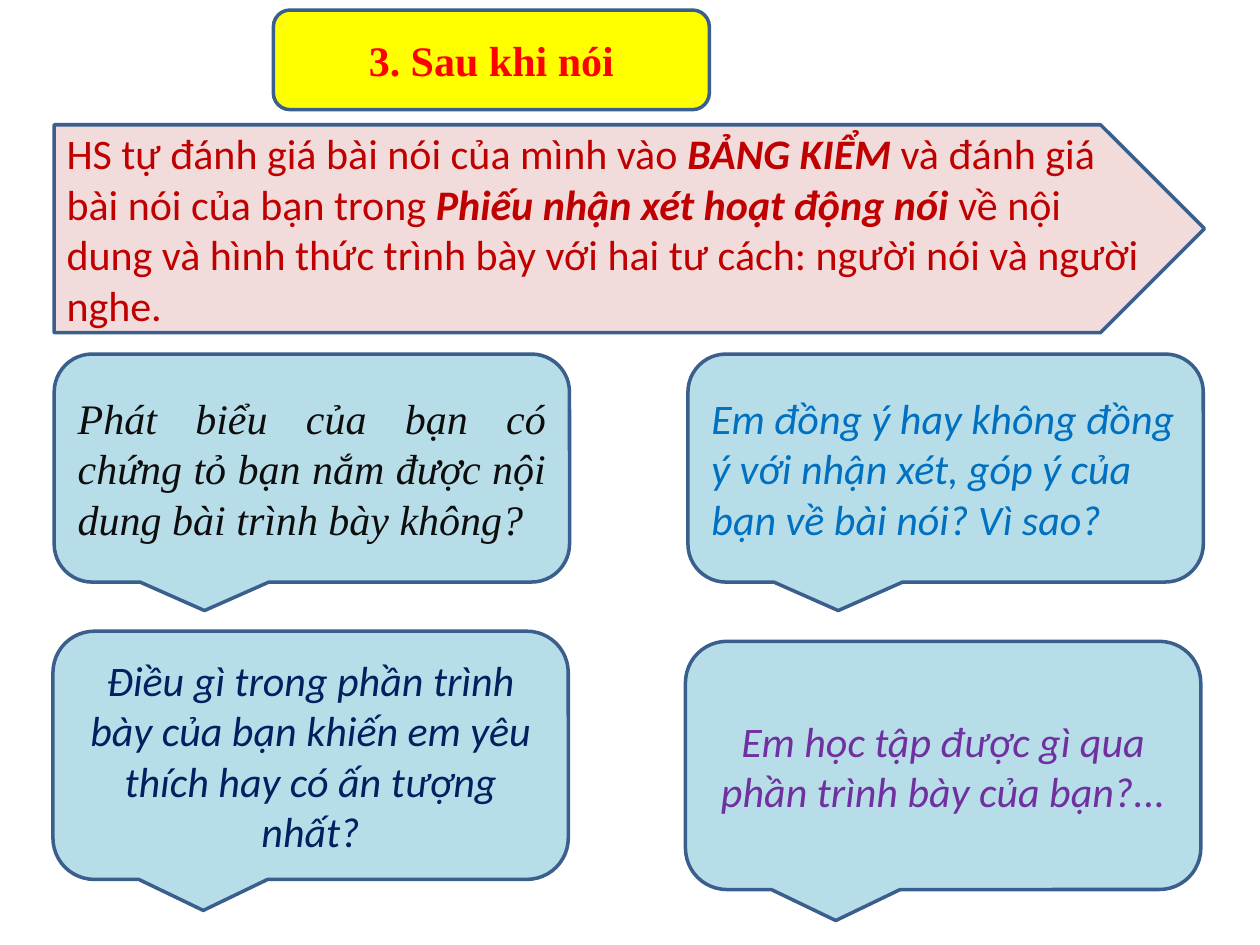
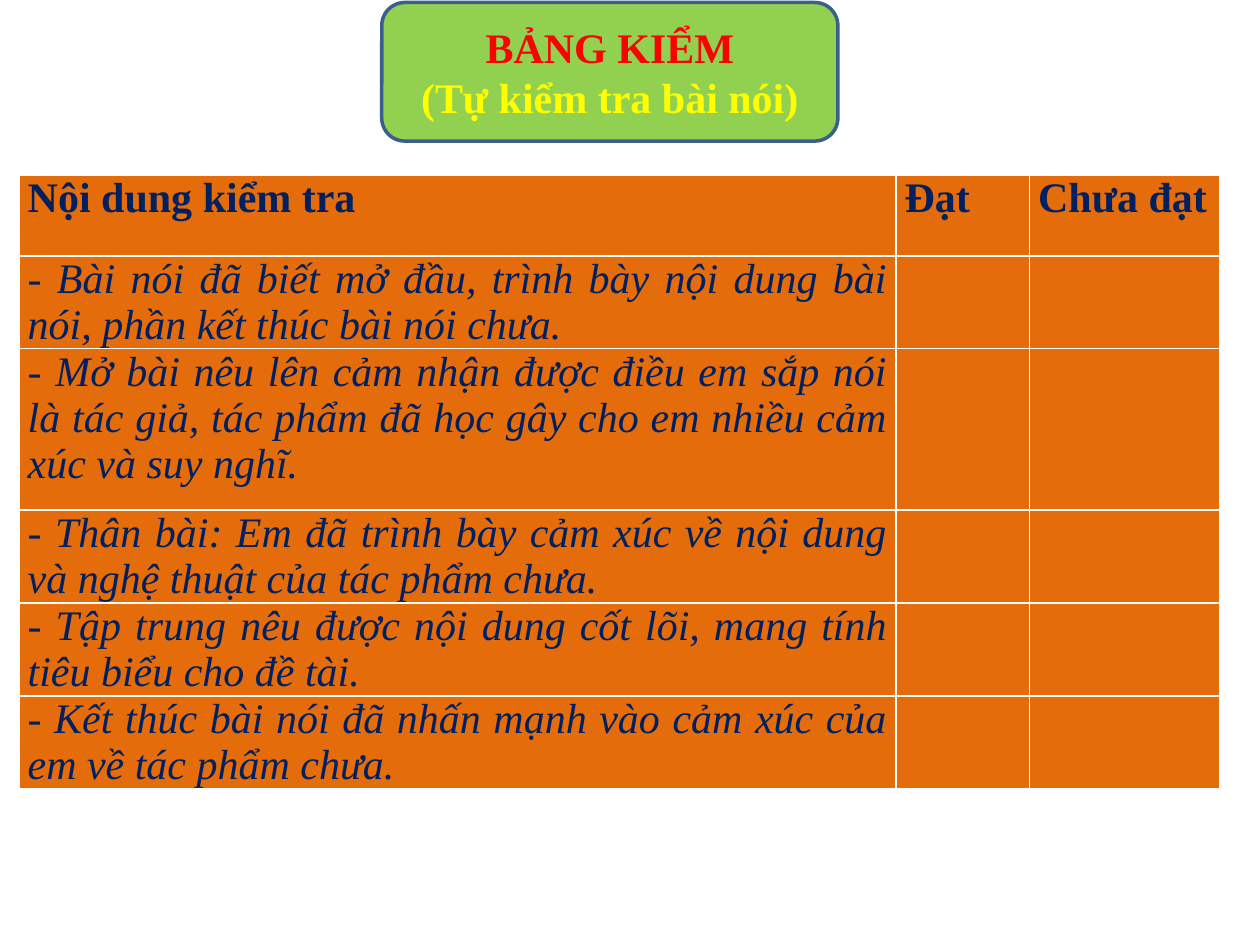
from dataclasses import dataclass

from pptx import Presentation
from pptx.dml.color import RGBColor
from pptx.enum.shapes import MSO_SHAPE as SHAPE
from pptx.enum.text import MSO_ANCHOR as ANCHOR, PP_ALIGN as ALIGN
from pptx.util import Inches, Pt


@dataclass(frozen=True)
class Theme:
    serif: str = "Times New Roman"
    sans: str = "Calibri"
    size: int = 24
    outline_width: int = 2
    outline: str = "3A5F8C"
    yellow: str = "FFFF00"
    red: str = "FF0000"
    dark_red: str = "C00000"
    pink: str = "F2DCDB"
    pale_blue: str = "B7DEE8"
    green: str = "92D050"
    orange: str = "E46C0A"
    ink: str = "0D0D0D"
    navy: str = "002060"
    blue: str = "0070C0"
    purple: str = "7030A0"


class Deck:
    def __init__(self, theme):
        self.theme = theme
        self.prs = Presentation()
        self.prs.slide_width, self.prs.slide_height = Inches(10), Inches(7.5)
        self.s = None

    def slide(self):
        self.s = self.prs.slides.add_slide(self.prs.slide_layouts[6])

    def run(self, p, text, font, color, bold=False, italic=False):
        r = p.add_run()
        r.text = text
        r.font.name = font
        r.font.size = Pt(self.theme.size)
        r.font.bold, r.font.italic = bold, italic
        r.font.color.rgb = RGBColor.from_string(color)

    def box(self, kind, at, fill):
        sp = self.s.shapes.add_shape(kind, *(Inches(v) for v in at))
        sp.shadow.inherit = False
        sp.fill.solid()
        sp.fill.fore_color.rgb = RGBColor.from_string(fill)
        sp.line.color.rgb = RGBColor.from_string(self.theme.outline)
        sp.line.width = Pt(self.theme.outline_width)
        tf = sp.text_frame
        tf.word_wrap = True
        tf.vertical_anchor = ANCHOR.MIDDLE
        return tf

    def title(self, kind, at, fill, lines):
        tf = self.box(kind, at, fill)
        for i, (text, color) in enumerate(lines):
            p = tf.add_paragraph() if i else tf.paragraphs[0]
            p.alignment = ALIGN.CENTER
            self.run(p, text, self.theme.serif, color, bold=True)

    def banner(self, at, parts):
        p = self.box(SHAPE.PENTAGON, at, self.theme.pink).paragraphs[0]
        p.alignment = ALIGN.LEFT
        for text, strong in parts:
            self.run(p, text, self.theme.sans, self.theme.dark_red, strong, strong)

    def question(self, at, text, font, color, align):
        tf = self.box(SHAPE.ROUNDED_RECTANGULAR_CALLOUT, at, self.theme.pale_blue)
        p = tf.paragraphs[0]
        p.alignment = align
        self.run(p, text, font, color, italic=True)

    def checklist(self, left, top, widths, heights, header, criteria):
        rows = [header] + [[text, "", ""] for text in criteria]
        table = self.s.shapes.add_table(
            len(rows), len(widths), Inches(left), Inches(top),
            Inches(sum(widths)), Inches(sum(heights))).table
        for column, width in zip(table.columns, widths):
            column.width = Inches(width)
        for i, (row, height, texts) in enumerate(zip(table.rows, heights, rows)):
            row.height = Inches(height)
            for cell, text in zip(row.cells, texts):
                cell.fill.solid()
                cell.fill.fore_color.rgb = RGBColor.from_string(self.theme.orange)
                cell.margin_left = cell.margin_right = Inches(0.07)
                cell.margin_top = cell.margin_bottom = 0
                if text:
                    p = cell.text_frame.paragraphs[0]
                    p.alignment = ALIGN.JUSTIFY
                    self.run(p, text, self.theme.serif, self.theme.navy,
                             bold=i == 0, italic=i > 0)


def after_speaking(deck):
    t = deck.theme
    deck.slide()
    deck.title(SHAPE.ROUNDED_RECTANGLE, (2.17, 0.08, 3.46, 0.79), t.yellow,
               [("3. Sau khi nói", t.red)])
    deck.banner((0.43, 0.99, 9.13, 1.65), [
        ("HS tự đánh giá bài nói của mình vào ", False),
        ("BẢNG KIỂM ", True),
        ("và đánh giá bài nói của bạn trong ", False),
        ("Phiếu nhận xét hoạt động nói ", True),
        ("về nội dung và hình thức trình bày với hai tư cách: "
         "người nói và người nghe.", False),
    ])
    width, upper, lower = 4.09, 1.81, 1.97
    questions = [
        ((0.43, 2.81, width, upper),
         "Phát biểu của bạn có chứng tỏ bạn nắm được nội dung bài trình bày không?",
         t.serif, t.ink, ALIGN.JUSTIFY),
        ((5.44, 5.09, width, lower),
         "Em học tập được gì qua phần trình bày của bạn?...",
         t.sans, t.purple, ALIGN.CENTER),
        ((0.42, 5.01, width, lower),
         "Điều gì trong phần trình bày của bạn khiến em yêu thích hay có ấn tượng nhất?",
         t.sans, t.navy, ALIGN.CENTER),
        ((5.46, 2.81, width, upper),
         "Em đồng ý hay không đồng ý với nhận xét, góp ý của bạn về bài nói? Vì sao?",
         t.sans, t.blue, ALIGN.LEFT),
    ]
    for question in questions:
        deck.question(*question)


def self_check(deck):
    t = deck.theme
    deck.slide()
    deck.title(SHAPE.FLOWCHART_ALTERNATE_PROCESS, (3.03, 0.02, 3.62, 1.1), t.green,
               [("BẢNG KIỂM", t.red), ("(Tự kiểm tra bài nói)", t.yellow)])
    row = 0.64
    deck.checklist(
        0.15, 1.39, [6.96, 1.06, 1.51], [row, row, 2 * row, row, row, row],
        ["Nội dung kiểm tra", "Đạt", "Chưa đạt"],
        ["- Bài nói đã biết mở đầu, trình bày nội dung bài nói, "
         "phần kết thúc bài nói chưa.",
         "- Mở bài nêu lên cảm nhận được điều em sắp nói là tác giả, "
         "tác phẩm đã học gây cho em nhiều cảm xúc và suy nghĩ.",
         "- Thân bài: Em đã trình bày cảm xúc về nội dung và nghệ thuật "
         "của tác phẩm chưa.",
         "- Tập trung nêu được nội dung cốt lõi, mang tính tiêu biểu cho đề tài.",
         "- Kết thúc bài nói đã nhấn mạnh vào cảm xúc của em về tác phẩm chưa."])


def main():
    deck = Deck(Theme())
    after_speaking(deck)
    self_check(deck)
    deck.prs.save("out.pptx")


if __name__ == "__main__":
    main()
